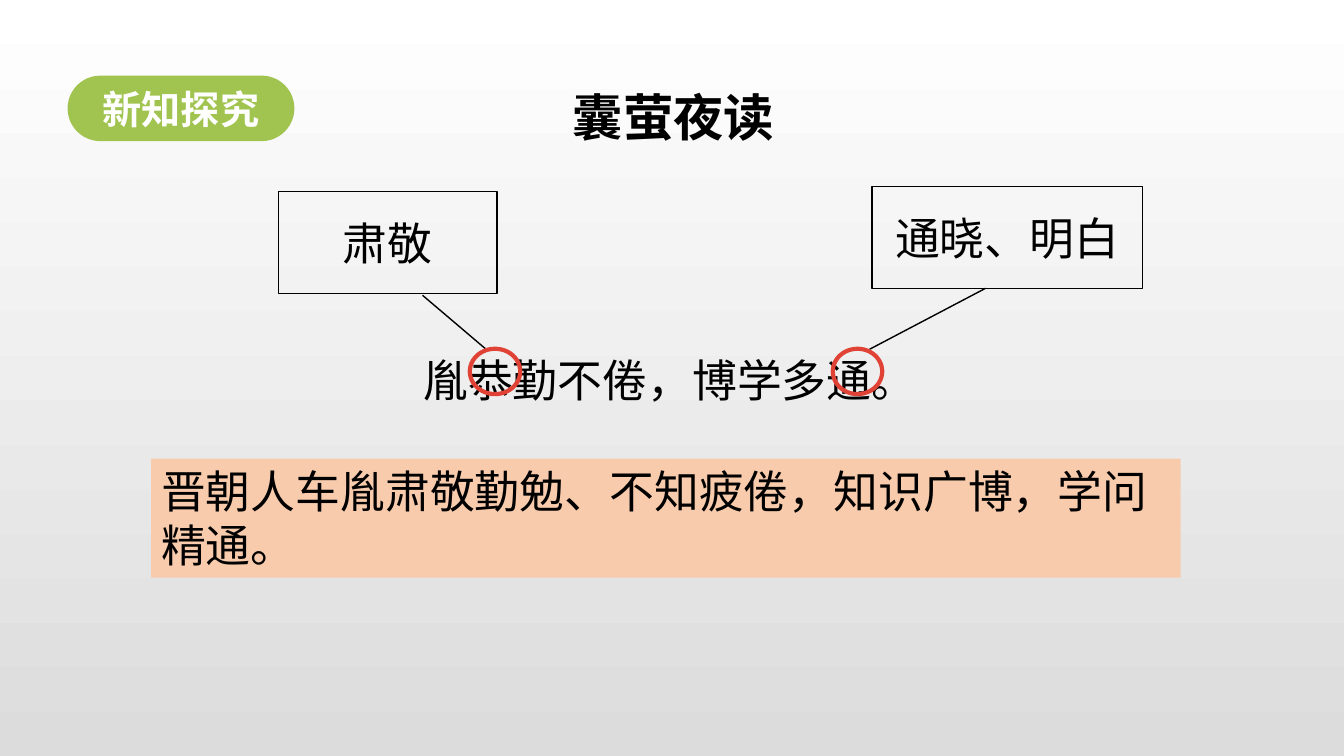
from lxml.etree import SubElement
from pptx import Presentation
from pptx.dml.color import RGBColor
from pptx.enum.shapes import MSO_SHAPE
from pptx.enum.text import MSO_ANCHOR, MSO_AUTO_SIZE, PP_ALIGN
from pptx.oxml.ns import qn
from pptx.util import Inches, Pt

FONT = "Noto Sans CJK SC"


def rgb(value):
    return RGBColor.from_string(value)


def write(sp, text, size=32, color="000000", bold=False, font=FONT,
          align=PP_ALIGN.LEFT, anchor=MSO_ANCHOR.TOP, wrap=True):
    tf = sp.text_frame
    tf.auto_size = MSO_AUTO_SIZE.NONE
    tf.word_wrap = wrap
    tf.vertical_anchor = anchor
    p = tf.paragraphs[0]
    p.alignment = align
    r = p.add_run()
    r.text = text
    r.font.name = font
    r.font.size = Pt(size)
    r.font.bold = bold
    r.font.color.rgb = rgb(color)
    SubElement(r.font._element, qn("a:ea")).set("typeface", FONT)


prs = Presentation()
prs.slide_width, prs.slide_height = Inches(13.33), Inches(7.5)
s = prs.slides.add_slide(prs.slide_layouts[5])

bg = s.background.fill
bg.gradient()
bg.gradient_angle = 270
for stop, position, color in zip(bg.gradient_stops, (0, 1), ("FFFFFF", "DCDCDC")):
    stop.position = position
    stop.color.rgb = rgb(color)

verse = s.shapes.add_textbox(Inches(4), Inches(3.45), Inches(5.86), Inches(0.64))
write(verse, " 胤恭勤不倦，博学多通。", font="Arial")

centered = {"align": PP_ALIGN.CENTER, "anchor": MSO_ANCHOR.MIDDLE}
badge = {"size": 28, "color": "FFFFFF", "bold": True, **centered}
callout, oval = MSO_SHAPE.LINE_CALLOUT_1, MSO_SHAPE.OVAL
shapes = [
    (MSO_SHAPE.RECTANGLE, (1.5, 4.55, 10.21, 1.18), [], "F8CBAD", None,
     "晋朝人车胤肃敬勤勉、不知疲倦，知识广博，学问精通。", {}),
    (callout, (2.76, 1.9, 2.17, 1.01), [1.02, 0.66, 1.55, 0.95], None, ("000000", 1),
     "肃敬", centered),
    (MSO_SHAPE.ROUNDED_RECTANGLE, (0.67, 0.75, 2.25, 0.65), [0.5], "A1C450", None,
     "新知探究", badge),
    (callout, (8.65, 1.85, 2.68, 1.01), [1, 0.42, 1.6, -0.01], None, ("000000", 1),
     "通晓、明白", centered),
    (oval, (4.66, 3.46, 0.5, 0.45), [], None, ("E04236", 3), "", {}),
    (oval, (8.26, 3.46, 0.49, 0.45), [], None, ("E04236", 3), "", {}),
]
for kind, box, adjustments, fill, line, text, style in shapes:
    sp = s.shapes.add_shape(kind, *map(Inches, box))
    sp.shadow.inherit = False
    for i, value in enumerate(adjustments):
        sp.adjustments[i] = value
    if fill:
        sp.fill.solid()
        sp.fill.fore_color.rgb = rgb(fill)
    else:
        sp.fill.background()
    if line:
        sp.line.color.rgb = rgb(line[0])
        sp.line.width = Pt(line[1])
    else:
        sp.line.fill.background()
    if text:
        write(sp, text, **style)

title = s.shapes.title
title.left, title.top = Inches(5.58), Inches(0.8)
title.width, title.height = Inches(2.22), Inches(0.71)
write(title, "囊萤夜读", size=36, bold=True, wrap=False)

prs.save("out.pptx")
